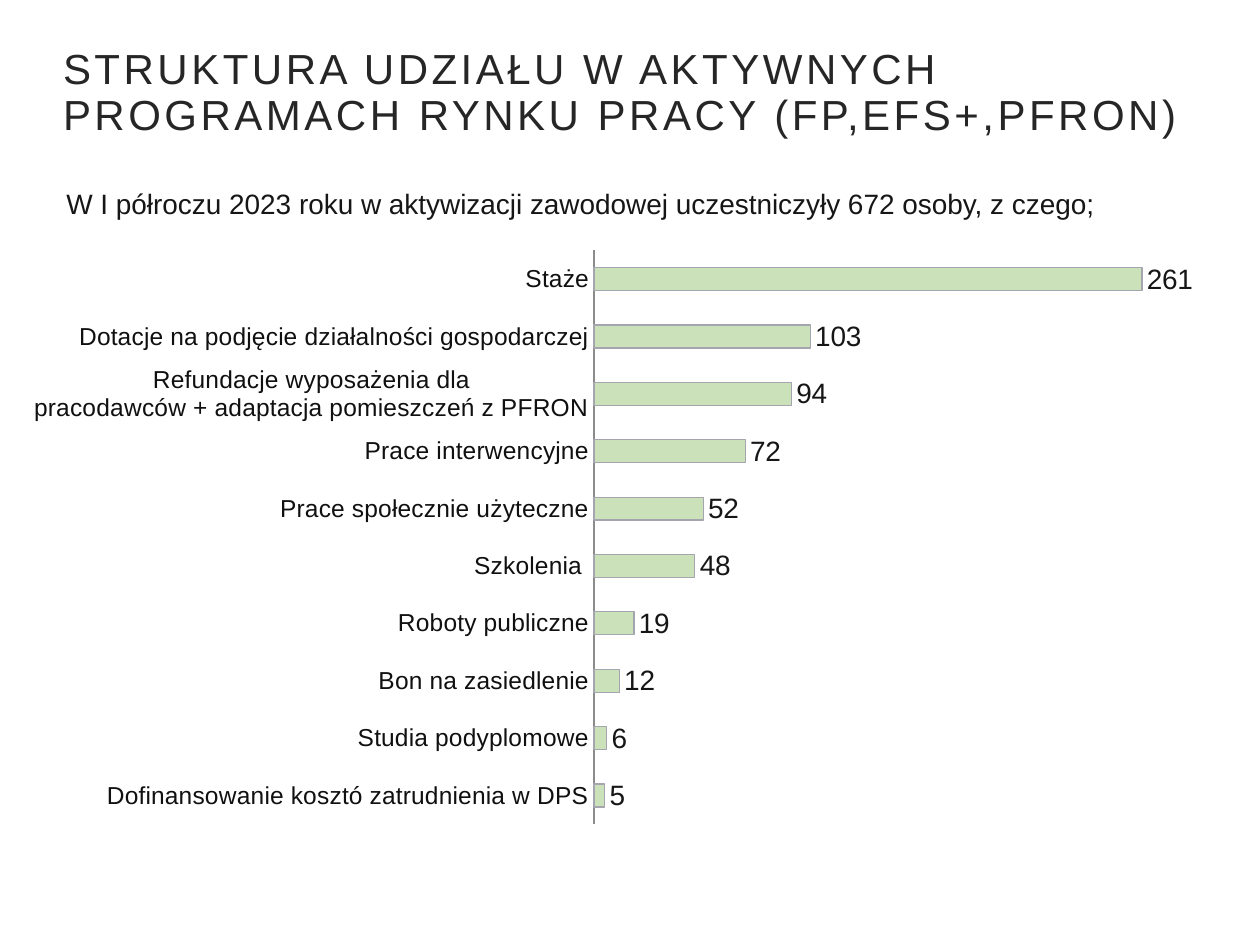
from lxml.etree import SubElement as Sub
from pptx import Presentation
from pptx.chart.data import CategoryChartData as Data
from pptx.dml.color import RGBColor as Rgb
from pptx.enum.chart import XL_CHART_TYPE as Kind, XL_LABEL_POSITION as Spot
from pptx.enum.chart import XL_TICK_MARK as Tick
from pptx.enum.text import MSO_ANCHOR as Anchor, MSO_AUTO_SIZE as Fit, PP_ALIGN as Align
from pptx.oxml.ns import qn
from pptx.util import Emu, Pt

SCALE = 914400 / 126
INK = {"title": "262626", "text": "171616", "axis": "111010",
       "bar": "CAE1B9", "edge": "A5A5B0", "line": "8C8C8C"}


def px(*nums):
    return [Emu(round(n * SCALE)) for n in nums]


def style(font, size, ink):
    for key, val in {"name": "Arial", "size": Pt(size), "bold": False}.items():
        setattr(font, key, val)
    font.color.rgb = Rgb.from_string(INK[ink])


deck = Presentation()
deck.slide_width, deck.slide_height = px(1260, 945)
slide = deck.slides.add_slide(deck.slide_layouts[5])

title = slide.shapes.title
title.left, title.top, title.width, title.height = px(25, 33, 1211, 122)
frame = title.text_frame
pad = px(25)[0]
form = {"word_wrap": True, "auto_size": Fit.NONE, "vertical_anchor": Anchor.MIDDLE,
        "margin_left": pad, "margin_right": pad, "margin_top": pad, "margin_bottom": pad}
for key, val in form.items():
    setattr(frame, key, val)
frame.text = "STRUKTURA UDZIAŁU W AKTYWNYCH PROGRAMACH RYNKU PRACY (FP,EFS+,PFRON)"
para = frame.paragraphs[0]
para.alignment = Align.LEFT
para.line_spacing = 0.9
props = para._p.get_or_add_pPr()
props.set("marL", str(px(13)[0]))
props.set("indent", "0")
run = para.runs[0]
style(run.font, 24, "title")
run._r.get_or_add_rPr().set("spc", "200")

rows = [
    ("Staże", 261),
    ("Dotacje na podjęcie działalności gospodarczej", 103),
    ("Refundacje wyposażenia dla\npracodawców + adaptacja pomieszczeń z PFRON", 94),
    ("Prace interwencyjne", 72),
    ("Prace społecznie użyteczne", 52),
    ("Szkolenia ", 48),
    ("Roboty publiczne", 19),
    ("Bon na zasiedlenie", 12),
    ("Studia podyplomowe", 6),
    ("Dofinansowanie kosztó zatrudnienia w DPS", 5),
]
names, vals = zip(*reversed(rows))
data = Data()
data.categories = names
data.add_series("Series 1", vals)
chart = slide.shapes.add_chart(Kind.BAR_CLUSTERED, *px(25, 232, 1211, 617), data).chart
chart.has_legend = False
chart.has_title = False
style(chart.font, 18, "text")

cats = chart.category_axis
cats.major_tick_mark = cats.minor_tick_mark = Tick.NONE
style(cats.tick_labels.font, 14, "axis")
cats.format.line.color.rgb = Rgb.from_string(INK["line"])
cats.format.line.width = Pt(0.75)
axis = chart.value_axis
for key, val in {"minimum_scale": 0, "maximum_scale": 300,
                 "has_major_gridlines": False, "visible": False}.items():
    setattr(axis, key, val)

plot = chart.plots[0]
for key, val in {"gap_width": 150, "overlap": -25, "vary_by_categories": False,
                 "has_data_labels": True}.items():
    setattr(plot, key, val)
tags = plot.data_labels
tags.show_value = True
tags.position = Spot.OUTSIDE_END
style(tags.font, 16, "text")
bars = plot.series[0].format
bars.fill.solid()
bars.fill.fore_color.rgb = Rgb.from_string(INK["bar"])
bars.line.color.rgb = Rgb.from_string(INK["edge"])
bars.line.width = Pt(0.75)

area = chart._chartSpace.chart.plotArea
for old in area.findall(qn("c:layout")):
    area.remove(old)
lay = Sub(area, qn("c:layout"))
area.insert(0, lay)
man = Sub(lay, qn("c:manualLayout"))
for key, val in {"layoutTarget": "inner", "xMode": "edge", "yMode": "edge",
                 "x": 0.47, "y": 0.03, "w": 0.52, "h": 0.93}.items():
    Sub(man, qn("c:" + key)).set("val", str(val))

note = slide.shapes.add_textbox(*px(54, 180, 1160, 47)).text_frame
note.word_wrap = True
note.auto_size = Fit.SHAPE_TO_FIT_TEXT
note.text = "W I półroczu 2023 roku w aktywizacji zawodowej uczestniczyły 672 osoby, z czego;"
style(note.paragraphs[0].runs[0].font, 16, "text")

deck.save("out.pptx")
